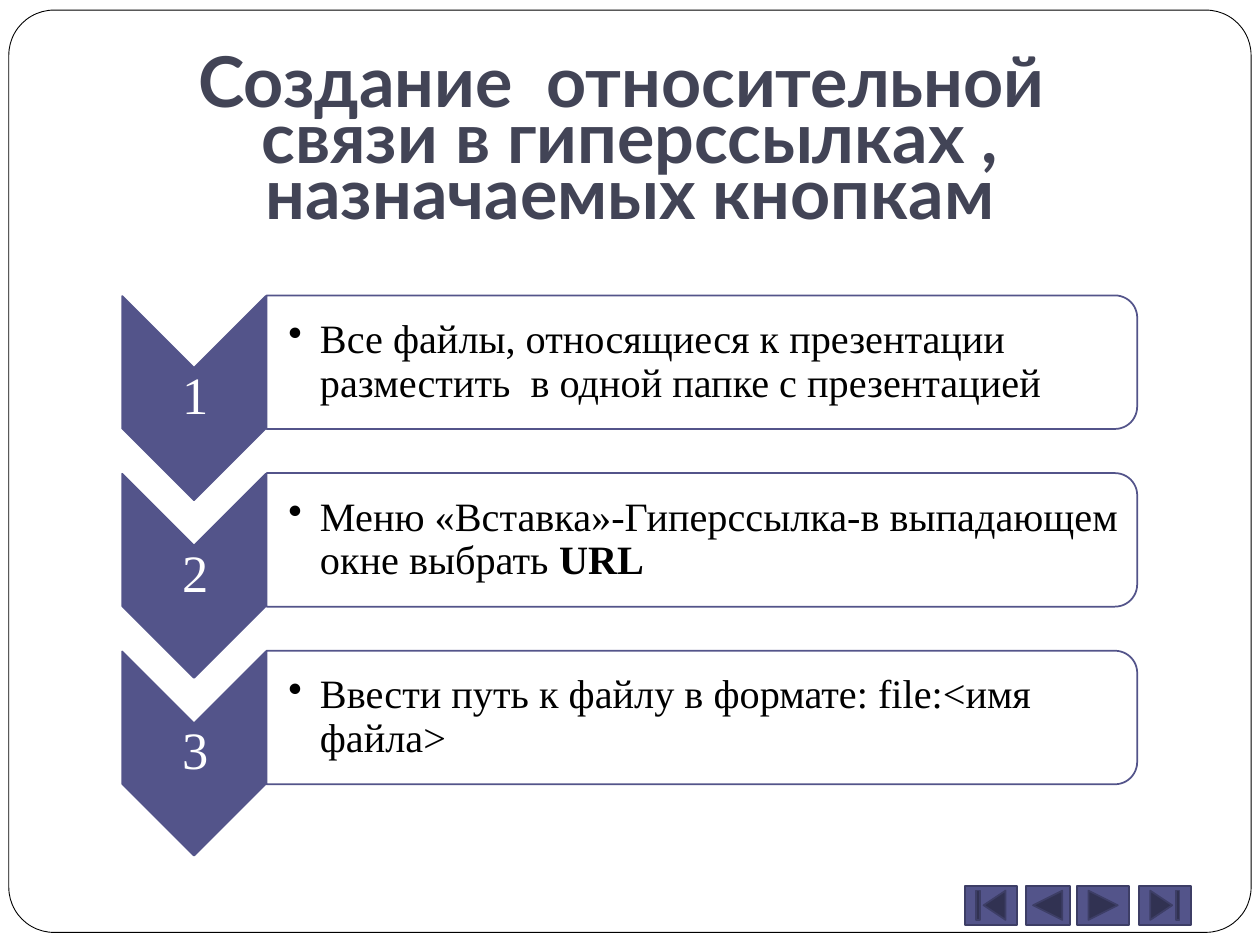
from lxml.etree import SubElement
from pptx import Presentation
from pptx.dml.color import RGBColor
from pptx.enum.shapes import MSO_SHAPE
from pptx.enum.text import MSO_ANCHOR, MSO_AUTO_SIZE, PP_ALIGN
from pptx.oxml.ns import qn
from pptx.util import Inches, Pt

COLORS = {"white": "FFFFFF", "black": "000000", "title": "424456",
          "violet": "53548A", "edge": "3D3E66"}
SERIF = "Times New Roman"


def draw(kind, box, fill, line, width=1, turn=0):
    shape = slide.shapes.add_shape(kind, *map(Inches, box))
    shape.shadow.inherit = False
    shape.rotation = turn
    shape.fill.solid()
    shape.fill.fore_color.rgb = RGBColor.from_string(COLORS[fill])
    shape.line.color.rgb = RGBColor.from_string(COLORS[line])
    shape.line.width = Pt(width)
    return shape


def write(shape, runs, size, color, font=SERIF, align=PP_ALIGN.LEFT, space=0.9,
          anchor=MSO_ANCHOR.MIDDLE, inset=(0.02, 0.02, 0.02, 0.02), bullet=False):
    """Fill one paragraph with (text, bold) runs."""
    frame = shape.text_frame
    frame.word_wrap = True
    frame.auto_size = MSO_AUTO_SIZE.NONE
    frame.vertical_anchor = anchor
    (frame.margin_left, frame.margin_top,
     frame.margin_right, frame.margin_bottom) = map(Inches, inset)
    para = frame.paragraphs[0]
    para.alignment = align
    para.line_spacing = space
    if bullet:
        props = para._p.get_or_add_pPr()
        props.set("marL", str(Inches(0.25)))
        props.set("indent", str(-Inches(0.25)))
        SubElement(props, qn("a:buChar")).set("char", "•")
    for text, bold in runs:
        run = para.add_run()
        run.text = text
        run.font.name = font
        run.font.size = Pt(size)
        run.font.bold = bold
        run.font.color.rgb = RGBColor.from_string(COLORS[color])


deck = Presentation()
deck.slide_width, deck.slide_height = Inches(10), Inches(7.5)
slide = deck.slides.add_slide(deck.slide_layouts[5])

# Frame behind the title
frame = draw(MSO_SHAPE.ROUNDED_RECTANGLE, (0.07, 0.08, 9.86, 7.32), "white", "black", 0.5)
frame.adjustments[0] = 0.049
slide.shapes._spTree.insert(2, frame._element)

title = slide.shapes.title
title.left, title.top, title.width, title.height = map(Inches, (0.75, 0.23, 8.5, 1.72))
write(title, [("Создание  относительной  связи в гиперссылках , назначаемых кнопкам", True)],
      40, "title", font="Lato", align=PP_ALIGN.CENTER, space=Pt(32),
      anchor=MSO_ANCHOR.BOTTOM, inset=(0.1, 0.05, 0.1, 0.1))

# Navigation buttons
buttons = [
    (MSO_SHAPE.ACTION_BUTTON_END, 9.04, 0.41),
    (MSO_SHAPE.ACTION_BUTTON_FORWARD_OR_NEXT, 8.55, 0.41),
    (MSO_SHAPE.ACTION_BUTTON_BACK_OR_PREVIOUS, 8.14, 0.35),
    (MSO_SHAPE.ACTION_BUTTON_BEGINNING, 7.66, 0.41),
]
for kind, left, width in buttons:
    draw(kind, (left, 7.03, width, 0.31), "violet", "edge")

# Numbered steps
steps = [
    [("Все файлы, относящиеся к презентации  разместить  в одной папке с презентацией", False)],
    [("Меню «Вставка»-Гиперссылка-в выпадающем окне выбрать ", False), ("URL", True)],
    [("Ввести путь к файлу в формате: file:<имя файла>", False)],
]
for index, runs in enumerate(steps):
    drop = 1.41 * index
    draw(MSO_SHAPE.CHEVRON, (0.73, 2.59 + drop, 1.62, 1.14), "violet", "violet", turn=90)
    label = slide.shapes.add_textbox(*map(Inches, (0.98, 2.91 + drop, 1.14, 0.49)))
    write(label, [(str(index + 1), False)], 30, "white", align=PP_ALIGN.CENTER)

    panel = draw(MSO_SHAPE.ROUND_2_SAME_RECTANGLE, (5.04, -0.58 + drop, 1.06, 6.91),
                 "white", "violet", turn=90)
    tint = panel._element.spPr.find(qn("a:solidFill"))[0]
    SubElement(tint, qn("a:alpha")).set("val", "90000")
    body = slide.shapes.add_textbox(*map(Inches, (2.11, 2.4 + drop, 6.86, 0.95)))
    write(body, runs, 23, "black", inset=(0.18, 0.02, 0.02, 0.02), bullet=True)

deck.save("out.pptx")
